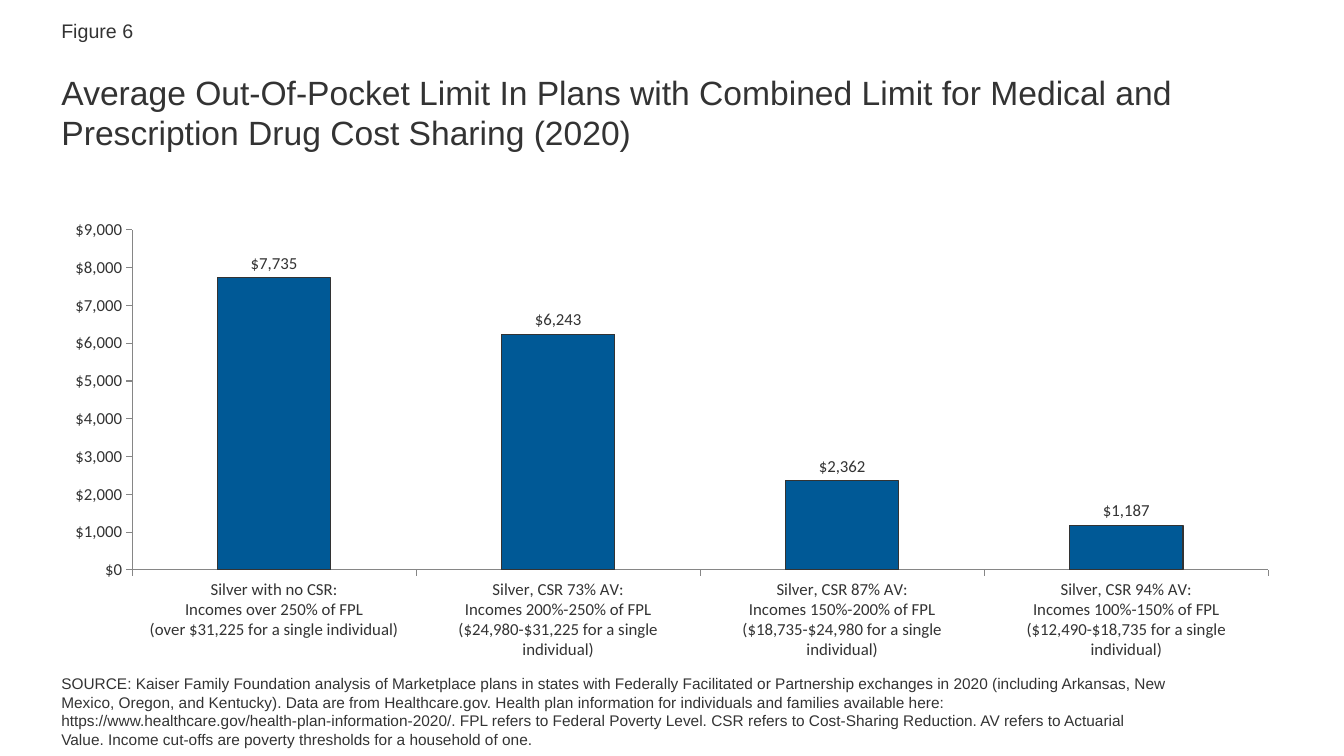
from lxml.etree import SubElement
from pptx import Presentation
from pptx.chart.data import CategoryChartData
from pptx.dml.color import RGBColor
from pptx.enum.chart import XL_CHART_TYPE, XL_LABEL_POSITION, XL_TICK_MARK
from pptx.enum.text import MSO_ANCHOR, MSO_AUTO_SIZE, PP_ALIGN
from pptx.oxml.ns import qn
from pptx.util import Pt

FIGURE = "Figure 6"
HEADLINE = ("Average Out-Of-Pocket Limit In Plans with Combined Limit for Medical and "
            "Prescription Drug Cost Sharing (2020)")
SOURCE = ("SOURCE: Kaiser Family Foundation analysis of Marketplace plans in states with "
          "Federally Facilitated or Partnership exchanges in 2020 (including Arkansas, New Mexico, "
          "Oregon, and Kentucky). Data are from Healthcare.gov. Health plan information for "
          "individuals and families available here: "
          "https://www.healthcare.gov/health-plan-information-2020/. FPL refers to Federal Poverty "
          "Level. CSR refers to Cost-Sharing Reduction. AV refers to Actuarial Value. Income "
          "cut-offs are poverty thresholds for a household of one.")
LIMITS = {
    "Silver with no CSR:\nIncomes over 250% of FPL\n(over $31,225 for a single individual)": 7735,
    "Silver, CSR 73% AV:\nIncomes 200%-250% of FPL\n($24,980-$31,225 for a single individual)": 6243,
    "Silver, CSR 87% AV:\nIncomes 150%-200% of FPL\n($18,735-$24,980 for a single individual)": 2362,
    "Silver, CSR 94% AV:\nIncomes 100%-150% of FPL\n($12,490-$18,735 for a single individual)": 1187,
}
DOLLARS = '"$"#,##0;[Red]"$"#,##0'
COLORS = {"text": "333333", "bar": "005996", "axis": "868686"}
PLOT_AREA = {"x": 0.065, "y": 0.042, "w": 0.915, "h": 0.743}  # fractions of the chart
LEFT, FULL_WIDTH = 36.7, 887


def color(name):
    return RGBColor.from_string(COLORS[name])


def write(box, text, size, anchor=MSO_ANCHOR.TOP):
    frame = box.text_frame
    frame.word_wrap = True
    frame.auto_size = MSO_AUTO_SIZE.NONE
    frame.vertical_anchor = anchor
    paragraph = frame.paragraphs[0]
    paragraph.alignment = PP_ALIGN.LEFT
    run = paragraph.add_run()
    run.text = text
    run.font.name = "Arial"
    run.font.size = Pt(size)
    run.font.color.rgb = color("text")


def style_font(font, size):
    font.name = "Calibri"
    font.size = Pt(size)
    font.color.rgb = color("text")


def fix_plot_area(chart):
    """Pin the inside of the axes to PLOT_AREA."""
    plot_area = chart.plots[0]._element.getparent()
    layout = plot_area.find(qn("c:layout"))
    if layout is None:
        layout = SubElement(plot_area, qn("c:layout"))
        plot_area.insert(0, layout)
    manual = SubElement(layout, qn("c:manualLayout"))
    settings = {"layoutTarget": "inner", "xMode": "edge", "yMode": "edge", **PLOT_AREA}
    for tag, value in settings.items():
        SubElement(manual, qn(f"c:{tag}")).set("val", str(value))


def add_limits_chart(slide):
    data = CategoryChartData(number_format=DOLLARS)
    data.categories = list(LIMITS)
    data.add_series("Series 1", list(LIMITS.values()))
    chart = slide.shapes.add_chart(XL_CHART_TYPE.COLUMN_CLUSTERED, Pt(LEFT), Pt(150.5),
                                   Pt(FULL_WIDTH), Pt(327), data).chart
    chart.has_legend = False
    chart.has_title = False
    style_font(chart.font, 16)
    fix_plot_area(chart)

    for axis in (chart.category_axis, chart.value_axis):
        axis.has_major_gridlines = False
        axis.major_tick_mark = XL_TICK_MARK.OUTSIDE
        axis.minor_tick_mark = XL_TICK_MARK.NONE
        axis.format.line.color.rgb = color("axis")
        axis.format.line.width = Pt(0.75)
        style_font(axis.tick_labels.font, 12)
    dollar_axis = chart.value_axis
    dollar_axis.minimum_scale, dollar_axis.maximum_scale = 0, 9000
    dollar_axis.major_unit = 1000
    dollar_axis.tick_labels.number_format = DOLLARS
    dollar_axis.tick_labels.number_format_is_linked = False

    plot = chart.plots[0]
    plot.gap_width = 150
    plot.vary_by_categories = False
    bars = plot.series[0]
    bars.format.fill.solid()
    bars.format.fill.fore_color.rgb = color("bar")
    bars.format.line.color.rgb = color("text")
    bars.format.line.width = Pt(0.75)
    labels = bars.data_labels
    labels.show_value = True
    labels.position = XL_LABEL_POSITION.OUTSIDE_END
    labels.number_format = DOLLARS
    labels.number_format_is_linked = False
    style_font(labels.font, 12)


def main():
    deck = Presentation()
    deck.slide_width, deck.slide_height = Pt(960), Pt(540)
    slide = deck.slides.add_slide(deck.slide_layouts[5])

    add_limits_chart(slide)
    source_note = slide.shapes.add_textbox(Pt(LEFT), Pt(478), Pt(806.4), Pt(54))
    write(source_note, SOURCE, 11)

    title = slide.shapes.title
    title.left, title.top, title.width, title.height = Pt(LEFT), Pt(46), Pt(FULL_WIDTH), Pt(67.7)
    write(title, HEADLINE, 24, MSO_ANCHOR.MIDDLE)

    figure_number = slide.shapes.add_textbox(Pt(LEFT), Pt(10), Pt(224), Pt(29))
    write(figure_number, FIGURE, 14)

    deck.save("out.pptx")


if __name__ == "__main__":
    main()
